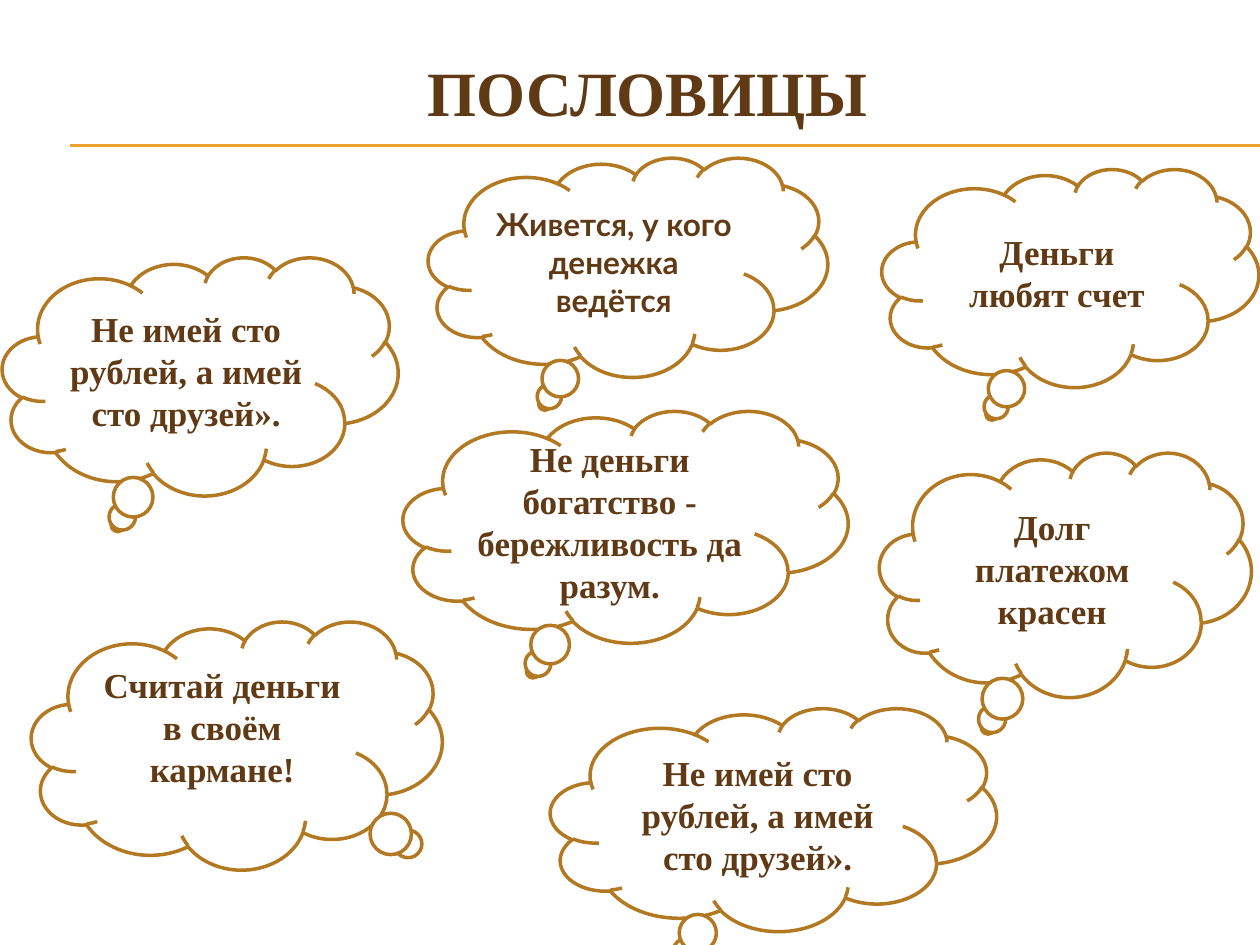
from typing import NamedTuple, Optional

import pptx
import pptx.dml.color
import pptx.enum.shapes
import pptx.enum.text
import pptx.oxml.ns
import pptx.util
from lxml import etree

Pt = pptx.util.Pt
RGBColor = pptx.dml.color.RGBColor
PP_ALIGN = pptx.enum.text.PP_ALIGN
MSO_ANCHOR = pptx.enum.text.MSO_ANCHOR

WHITE = RGBColor(0xFF, 0xFF, 0xFF)
GOLD = RGBColor(0xF0, 0xA2, 0x2E)
OCHRE = RGBColor(0xB2, 0x78, 0x22)
BROWN = RGBColor(0x60, 0x3A, 0x14)
SERIF = "Times New Roman"
SLIDE_W, SLIDE_H = 720, 540


class Cloud(NamedTuple):
    left: float
    top: float
    width: float
    height: float
    text: str
    font: str = SERIF
    size: float = 20
    tail: Optional[tuple[float, float]] = None
    bottom: float = 3.6


FRIENDS = "Не имей сто рублей, а имей сто друзей»."
CLOUDS = [
    Cloud(18, 355, 234.7, 141.8, "Считай деньги в своём кармане!",
          tail=(0.43, 0.41), bottom=18),
    Cloud(502.6, 258.5, 212.4, 139.7, "Долг платежом красен"),
    Cloud(230.4, 234.7, 254.2, 132.5,
          "Не деньги богатство - бережливость да разум."),
    Cloud(1.4, 146.9, 226.1, 136.1, FRIENDS),
    Cloud(314.6, 404.6, 254.9, 127.4, FRIENDS),
    Cloud(504, 96.5, 215.3, 124.6, "Деньги любят счет"),
    Cloud(244.8, 90, 228.2, 125.3, "Живется, у кого денежка ведётся",
          font="Lato", size=18),
]


def write(tf: pptx.text.text.TextFrame, text: str, font: str, size: float) -> None:
    """Put one bold, centred brown paragraph into a text frame."""
    tf.word_wrap = True
    tf.vertical_anchor = MSO_ANCHOR.MIDDLE
    p = tf.paragraphs[0]
    p.text = text
    p.alignment = PP_ALIGN.CENTER
    p.font.name = font
    p.font.size = Pt(size)
    p.font.bold = True
    p.font.color.rgb = BROWN


def add_rule(s: pptx.slide.Slide, y: float) -> None:
    """Draw a thin gold line from the left margin to the slide edge."""
    line = s.shapes.add_connector(
        pptx.enum.shapes.MSO_CONNECTOR.STRAIGHT, Pt(40.3), Pt(y), Pt(SLIDE_W), Pt(y))
    line.line.color.rgb = GOLD
    line.line.width = Pt(0.75)
    etree.SubElement(line._element.spPr, pptx.oxml.ns.qn("a:effectLst"))


def add_cloud(s: pptx.slide.Slide, cloud: Cloud) -> None:
    """Draw a thought cloud with its proverb."""
    sp = s.shapes.add_shape(
        pptx.enum.shapes.MSO_SHAPE.CLOUD_CALLOUT,
        Pt(cloud.left), Pt(cloud.top), Pt(cloud.width), Pt(cloud.height))
    sp.shadow.inherit = False
    sp.fill.solid()
    sp.fill.fore_color.rgb = WHITE
    sp.line.color.rgb = OCHRE
    sp.line.width = Pt(2)
    if cloud.tail:
        sp.adjustments[0], sp.adjustments[1] = cloud.tail
    sp.text_frame.margin_bottom = Pt(cloud.bottom)
    write(sp.text_frame, cloud.text, cloud.font, cloud.size)


def main() -> None:
    """Build the slide of proverbs and save it."""
    prs = pptx.Presentation()
    prs.slide_width, prs.slide_height = Pt(SLIDE_W), Pt(SLIDE_H)
    s = prs.slides.add_slide(prs.slide_layouts[6])
    for y in (82.8, 83.5):
        add_rule(s, y)
    for cloud in CLOUDS:
        add_cloud(s, cloud)
    title = s.shapes.add_textbox(Pt(20.2), Pt(20.9), Pt(699.8), Pt(62.6))
    write(title.text_frame, "ПОСЛОВИЦЫ", SERIF, 36)
    prs.save("out.pptx")


if __name__ == "__main__":
    main()
